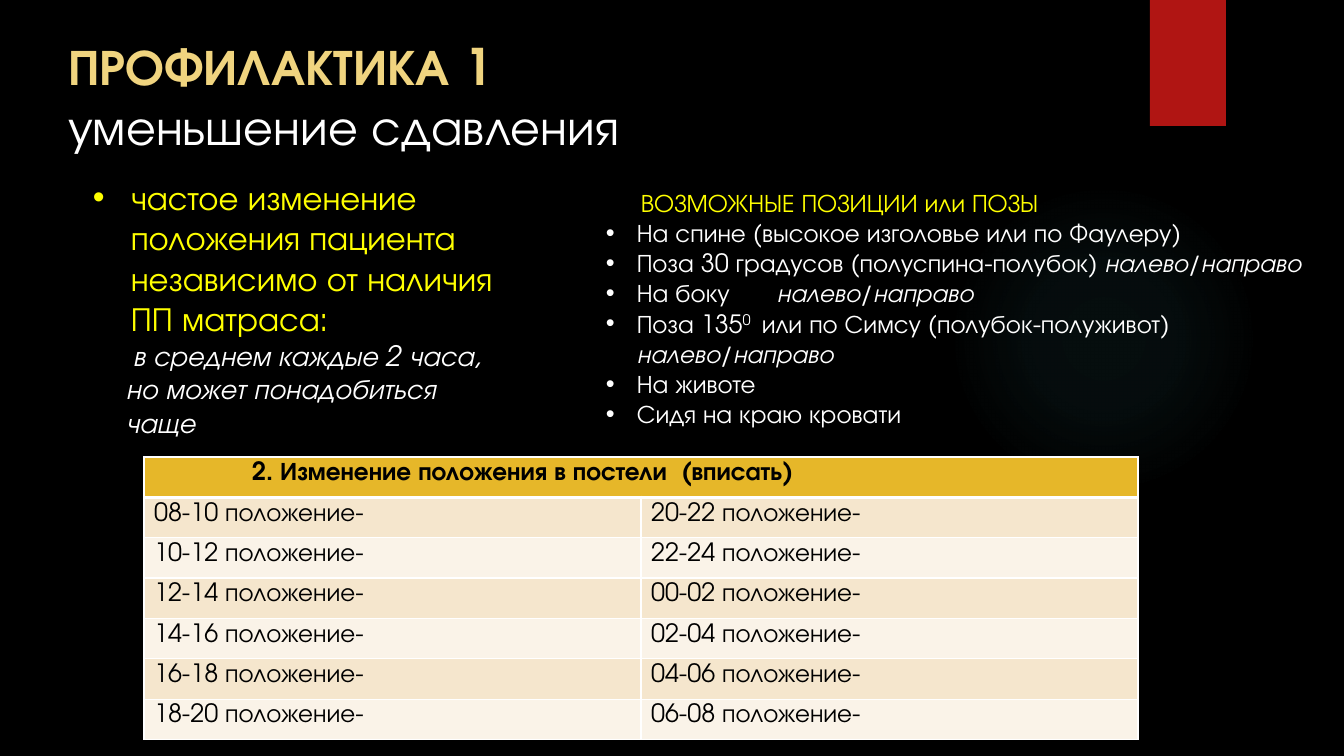
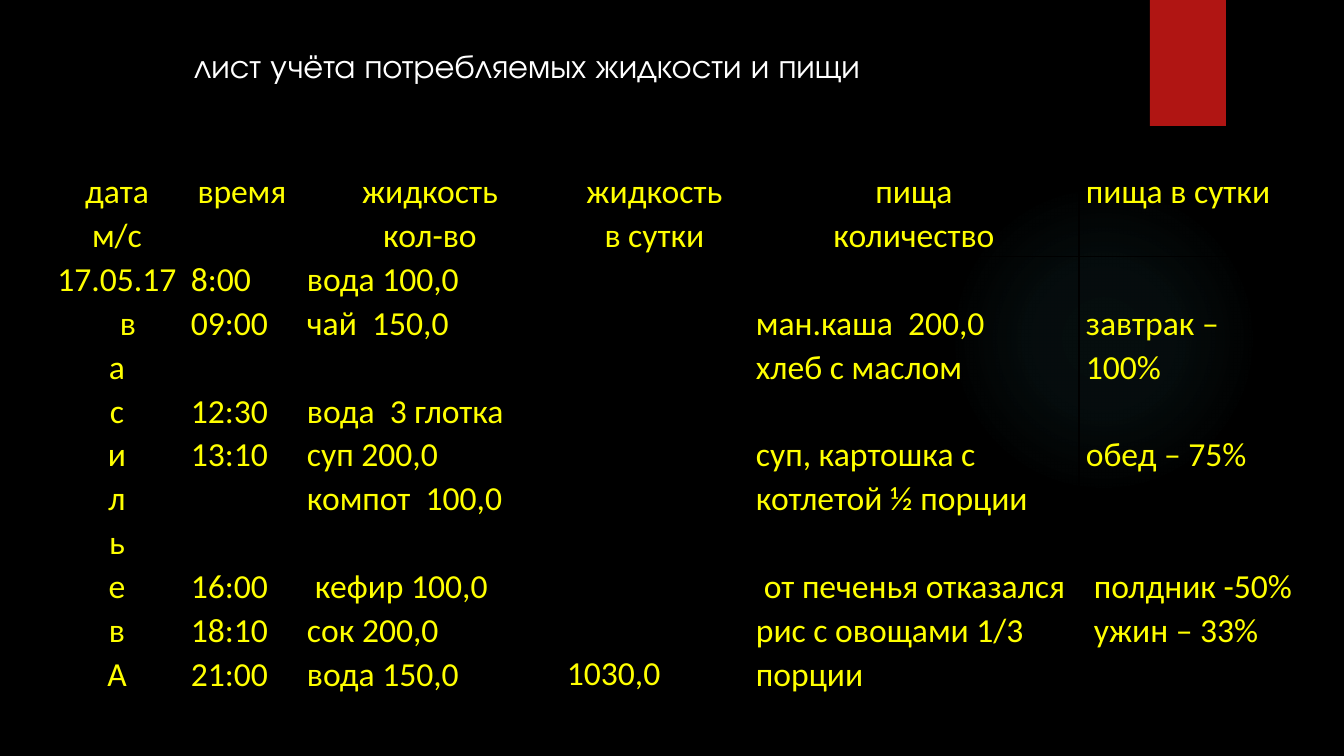
from pptx import Presentation
from pptx.dml.color import RGBColor
from pptx.enum.shapes import MSO_SHAPE
from pptx.enum.text import MSO_ANCHOR, MSO_AUTO_SIZE, PP_ALIGN
from pptx.oxml import parse_xml
from pptx.oxml.ns import nsdecls
from pptx.util import Emu, Pt

SCALE = 12192000 / 1344
TITLE_ONLY = 5
DISPLAY_FONT, TABLE_FONT = "TeX Gyre Adventor", "Calibri"
LINE_SPACING, LINE_POINTS = 1.07, 31.3
COLORS = {
    "black": "000000", "white": "FFFFFF", "yellow": "FFFF00", "gold": "F0D47F",
    "red": "B01513", "glow": "50B9C1", "header": "E6B729",
    "band_dark": "F5E6CD", "band_light": "FAF3E8",
}
GLOW_STOPS = [(0, 7), (36, 6), (69, 0)]


def plain(text, **style):
    return {"runs": [(text, style)]}


def bullet(*runs, **layout):
    return {"runs": runs, "margin": 31, "first": -31, "bullet": True, **layout}


def entry(text, gap=0, margin=0):
    return {"runs": [(text, {})], "gap": gap, "margin": margin}


ITALIC = {"italic": True}
SIDES = ("налево/направо", ITALIC)

PREVENTION_TITLE = [
    plain("ПРОФИЛАКТИКА 1", color="gold", bold=True),
    plain("уменьшение сдавления"),
]
FREQUENCY = [
    {"runs": [("частое изменение\nположения пациента\nнезависимо от наличия\nПП матраса:",
               {"size": 24, "color": "yellow"})],
     "margin": 38, "first": -38, "bullet": True},
    {"runs": [("в среднем каждые 2 часа,\nно может понадобиться\nчаще", ITALIC)],
     "margin": 33, "first": 7},
]
POSITIONS = [
    {"runs": [("ВОЗМОЖНЫЕ ПОЗИЦИИ или ПОЗЫ", {"color": "yellow"})], "margin": 35},
    bullet(("На спине (высокое изголовье или по Фаулеру)", {})),
    bullet(("Поза 30 градусов (полуспина-полубок) ", {}), SIDES),
    bullet(("На боку\t", {}), SIDES, tab=171),
    bullet(("Поза 135", {}), ("0 ", {"raised": True}),
           (" или по Симсу (полубок-полуживот) ", {}), SIDES),
    bullet(("На животе", {})),
    bullet(("Сидя на краю кровати", {})),
]
SCHEDULE_HEADER = "2. Изменение положения в постели  (вписать)"
SCHEDULE = [
    ("08-10", "20-22"), ("10-12", "22-24"), ("12-14", "00-02"),
    ("14-16", "02-04"), ("16-18", "04-06"), ("18-20", "06-08"),
]

INTAKE_TITLE = [plain("лист учёта потребляемых жидкости и пищи")]
CENTER, LEFT = PP_ALIGN.CENTER, PP_ALIGN.LEFT
INTAKE_COLUMNS = [
    {"width": 134, "heading": ["дата", "м/с"], "body_align": CENTER,
     "body": [entry("17.05.17"), entry("в", margin=22)] + [entry(letter) for letter in "асильевА"[0:]]},
    {"width": 116, "heading": ["время"],
     "body": [entry("8:00"), entry("09:00"), entry("12:30", gap=1), entry("13:10"),
              entry("16:00", gap=2), entry("18:10"), entry("21:00")]},
    {"width": 260, "heading": ["жидкость", "кол-во"],
     "body": [entry("вода 100,0"), entry("чай  150,0"), entry("вода  3 глотка", gap=1),
              entry("суп 200,0"), entry("компот  100,0"), entry("кефир 100,0", gap=1, margin=8),
              entry("сок 200,0"), entry("вода 150,0")]},
    {"width": 189, "heading": ["жидкость", "в сутки"], "lead": 9, "body": [entry("1030,0")]},
    {"width": 330, "heading": ["пища", "количество"], "lead": 1,
     "body": [entry("ман.каша  200,0"), entry("хлеб с маслом"),
              entry("суп, картошка с котлетой ½ порции", gap=1),
              entry("от печенья отказался", gap=1, margin=8),
              entry("рис с овощами 1/3 порции")]},
    {"width": 228, "heading": ["пища в сутки"], "heading_align": LEFT, "lead": 1,
     "body": [entry("завтрак – 100%"), entry("обед – 75%", gap=1),
              entry("полдник -50%", gap=2, margin=8), entry("ужин – 33%", margin=8)]},
]


def px(value):
    return Emu(round(value * SCALE))


def rgb(name):
    return RGBColor.from_string(COLORS[name])


def add_span(para, text, font, size, color, bold=False, italic=False, raised=False):
    for number, line in enumerate(text.split("\n")):
        if number:
            para.add_line_break()
        span = para.add_run()
        span.text = line
        span.font.name, span.font.size = font, Pt(size)
        span.font.color.rgb = rgb(color)
        span.font.bold, span.font.italic = bold, italic
        if raised:
            span.font._element.set("baseline", "30000")


def write(frame, paragraphs, size, color, font=DISPLAY_FONT, align=LEFT, spacing=1.0):
    frame.word_wrap = True
    for number, item in enumerate(paragraphs):
        para = frame.add_paragraph() if number else frame.paragraphs[0]
        properties = para._p.get_or_add_pPr()
        properties.set("marL", str(px(item.get("margin", 0))))
        properties.set("indent", str(px(item.get("first", 0))))
        if item.get("bullet"):
            properties.append(parse_xml(f'<a:buFont {nsdecls("a")} typeface="Arial"/>'))
            properties.append(parse_xml(f'<a:buChar {nsdecls("a")} char="•"/>'))
        if "tab" in item:
            properties.append(parse_xml(
                f'<a:tabLst {nsdecls("a")}><a:tab pos="{px(item["tab"])}" algn="l"/></a:tabLst>'))
        para.alignment, para.line_spacing = align, spacing
        if number:
            para.space_before = Pt(item.get("gap", 0) * LINE_POINTS)
        for text, style in item["runs"]:
            add_span(para, text, **{"font": font, "size": size, "color": color, **style})


def add_text(page, area, paragraphs, size, color):
    box = page.shapes.add_textbox(*map(px, area))
    write(box.text_frame, paragraphs, size, color)


def set_title(page, area, paragraphs, size):
    title = page.shapes.title
    title.left, title.top, title.width, title.height = map(px, area)
    frame = title.text_frame
    frame.auto_size, frame.vertical_anchor = MSO_AUTO_SIZE.NONE, MSO_ANCHOR.TOP
    write(frame, paragraphs, size, "white")


def set_borders(cell, color, bottom=1, top=1):
    properties = cell._tc.get_or_add_tcPr()
    for side, width in (("L", 1), ("R", 1), ("T", top), ("B", bottom)):
        properties.append(parse_xml(
            f'<a:ln{side} {nsdecls("a")} w="{Pt(width)}"><a:solidFill>'
            f'<a:srgbClr val="{COLORS[color]}"/></a:solidFill></a:ln{side}>'))


def add_grid(page, left, top, widths, heights):
    frame = page.shapes.add_table(len(heights), len(widths), px(left), px(top),
                                  px(sum(widths)), px(sum(heights)))
    table = frame.table
    table.first_row = table.horz_banding = False
    for column, width in zip(table.columns, widths):
        column.width = px(width)
    for row, height in zip(table.rows, heights):
        row.height = px(height)
    return table


def fill_cell(cell, color):
    cell.fill.solid()
    cell.fill.fore_color.rgb = rgb(color)


def decorate(layout, page):
    layout.background.fill.solid()
    layout.background.fill.fore_color.rgb = rgb("black")
    glow = page.shapes.add_shape(MSO_SHAPE.OVAL, px(949), px(184), px(310), px(310))
    band = page.shapes.add_shape(MSO_SHAPE.RECTANGLE, px(1150), px(0), px(76), px(126))
    band.fill.solid()
    band.fill.fore_color.rgb = rgb("red")
    stops = "".join(
        f'<a:gs pos="{place * 1000}"><a:srgbClr val="{COLORS["glow"]}">'
        f'<a:alpha val="{alpha * 1000}"/></a:srgbClr></a:gs>' for place, alpha in GLOW_STOPS)
    glow._element.spPr.append(parse_xml(
        f'<a:gradFill {nsdecls("a")} rotWithShape="1"><a:gsLst>{stops}</a:gsLst>'
        '<a:path path="circle"><a:fillToRect l="50000" t="50000" r="50000" b="50000"/></a:path>'
        '</a:gradFill>'))
    for shape in (glow, band):
        shape.line.fill.background()
        shape.shadow.inherit = False
        layout.shapes._spTree.append(shape._element)


def build_prevention(page):
    set_title(page, (58, 30, 1060, 132), PREVENTION_TITLE, 36)
    add_text(page, (83, 172, 467, 275), FREQUENCY, 20, "white")
    add_text(page, (596, 182, 740, 254), POSITIONS, 18, "white")
    table = add_grid(page, 144, 457, [497, 497], [40] * (len(SCHEDULE) + 1))
    header = table.cell(0, 0)
    header.merge(table.cell(0, 1))
    header.margin_left = px(108)
    write(header.text_frame, [plain(SCHEDULE_HEADER, bold=True)], 18, "black")
    for cell in table.rows[0].cells:
        set_borders(cell, "white", bottom=3)
        fill_cell(cell, "header")
    for row, hours in enumerate(SCHEDULE, 1):
        for column, period in enumerate(hours):
            cell = table.cell(row, column)
            write(cell.text_frame, [plain(f"{period} положение-")], 18, "black")
            set_borders(cell, "white", top=3 if row == 1 else 1)
            fill_cell(cell, "band_dark" if row % 2 else "band_light")


def build_intake(page):
    set_title(page, (184, 40, 762, 50), INTAKE_TITLE, 24)
    widths = [column["width"] for column in INTAKE_COLUMNS]
    table = add_grid(page, 50, 169, widths, [80, 489])
    for number, column in enumerate(INTAKE_COLUMNS):
        heading = [plain(line) for line in column["heading"]]
        parts = [(heading, column.get("heading_align", CENTER), 0),
                 (column["body"], column.get("body_align", LEFT), column.get("lead", 0))]
        for row, (paragraphs, align, lead) in enumerate(parts):
            cell = table.cell(row, number)
            cell.margin_left = cell.margin_right = px(7)
            cell.margin_top, cell.margin_bottom = Pt(lead * LINE_POINTS), 0
            write(cell.text_frame, paragraphs, 24, "yellow", TABLE_FONT, align, LINE_SPACING)
            set_borders(cell, "black")
            cell.fill.background()


def main():
    deck = Presentation()
    deck.slide_width, deck.slide_height = px(1344), px(756)
    layout = deck.slide_layouts[TITLE_ONLY]
    for number, build in enumerate((build_prevention, build_intake)):
        page = deck.slides.add_slide(layout)
        if number == 0:
            decorate(layout, page)
        build(page)
    deck.save("out.pptx")


if __name__ == "__main__":
    main()
